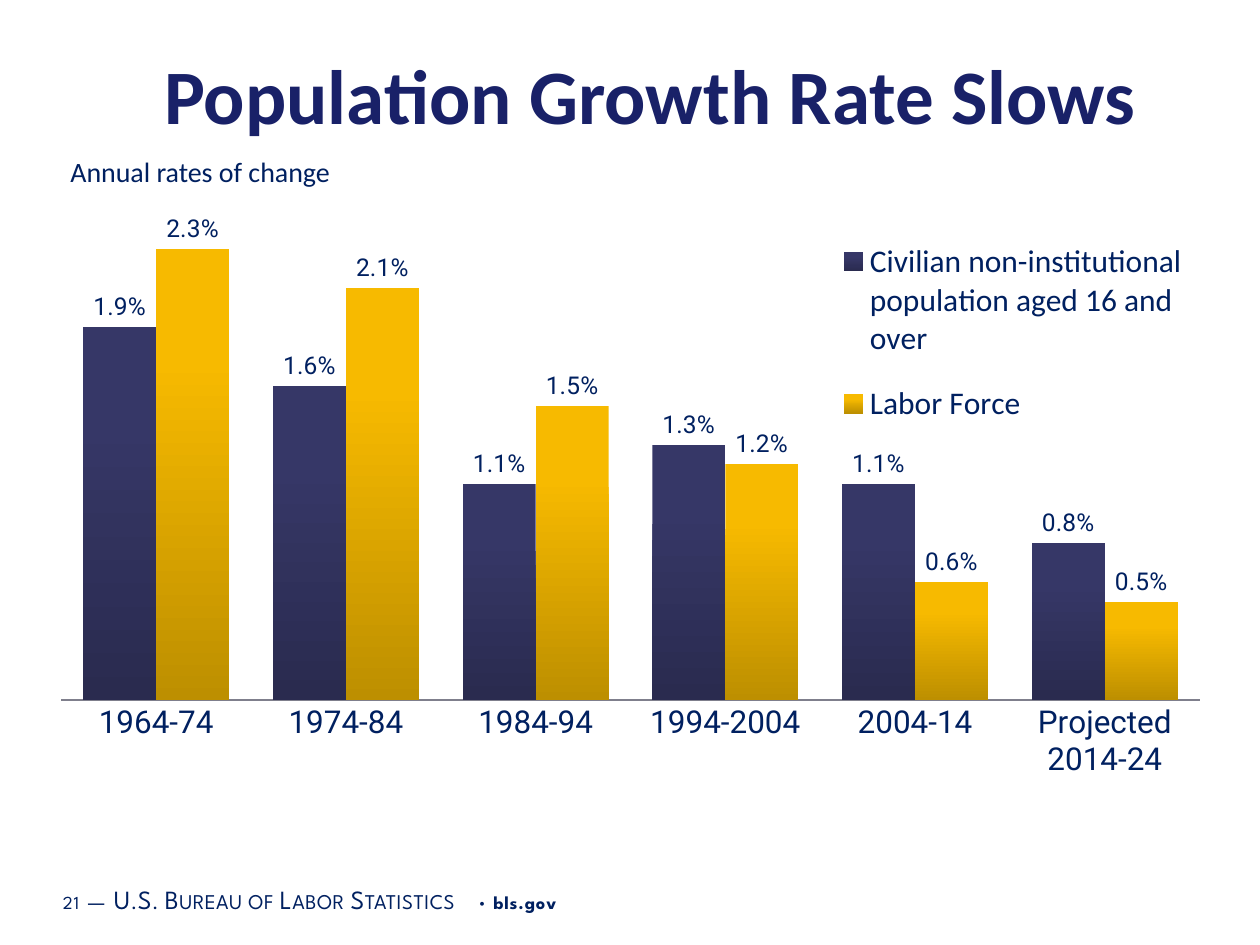
from dataclasses import dataclass, field
from typing import Any, NamedTuple

from lxml.etree import SubElement
from pptx import Presentation
from pptx.chart.data import CategoryChartData
from pptx.dml.color import RGBColor as Rgb
from pptx.enum.chart import XL_CHART_TYPE as ChartType
from pptx.enum.chart import XL_LABEL_POSITION as LabelPos
from pptx.enum.chart import XL_LEGEND_POSITION as LegendPos
from pptx.enum.chart import XL_TICK_MARK as TickMark
from pptx.enum.text import MSO_ANCHOR as Anchor
from pptx.enum.text import PP_ALIGN as Align
from pptx.oxml.ns import qn
from pptx.util import Cm, Pt


@dataclass(frozen=True)
class Theme:
    navy: Rgb = Rgb.from_string("002060")
    title_blue: Rgb = Rgb.from_string("192168")
    axis_gray: Rgb = Rgb.from_string("7F7F8C")
    body_font: str = "Calibri"
    chart_font: str = "Roboto"
    footer_font: str = "League Spartan"
    title_size: Pt = Pt(44)
    chart_size: Pt = Pt(18)
    note_size: Pt = Pt(16)
    agency_size: Pt = Pt(15)
    label_size: Pt = Pt(14)
    footer_size: Pt = Pt(10.5)


THEME = Theme()


class Box(NamedTuple):
    """Left, top, width and height in centimetres."""
    left: float
    top: float
    width: float
    height: float

    def lengths(self) -> list[Cm]:
        return [Cm(value) for value in self]


class Area(NamedTuple):
    """Place within the chart, as fractions of its size."""
    x: float
    y: float
    w: float
    h: float


class RateSeries(NamedTuple):
    name: str
    rates: list[float]
    top_color: str
    base_color: str


@dataclass
class Span:
    text: str
    font: dict[str, Any]
    xml: dict[str, str] = field(default_factory=dict)


def apply_format(target: Any, values: dict[str, Any]) -> None:
    for name, value in values.items():
        setattr(target, name, value)


def apply_font(font: Any, values: dict[str, Any], color: Rgb) -> None:
    apply_format(font, values)
    font.color.rgb = color


def add_text(slide: Any, box: Box, spans: list[Span], color: Rgb,
             frame_format: dict[str, Any],
             paragraph_format: dict[str, Any]) -> None:
    frame = slide.shapes.add_textbox(*box.lengths()).text_frame
    apply_format(frame, {"word_wrap": True, **frame_format})
    paragraph = frame.paragraphs[0]
    apply_format(paragraph, paragraph_format)
    for span in spans:
        run = paragraph.add_run()
        run.text = span.text
        apply_font(run.font, span.font, color)
        for name, value in span.xml.items():
            run.font._element.set(name, value)


def make_layout(parent: Any, area: Area, inner: bool = False) -> Any:
    """Replace the manual layout of a plot area or legend."""
    for old in parent.findall(qn("c:layout")):
        parent.remove(old)
    layout = SubElement(parent, qn("c:layout"))
    manual = SubElement(layout, qn("c:manualLayout"))
    settings = {"layoutTarget": "inner"} if inner else {}
    settings |= {"xMode": "edge", "yMode": "edge"}
    settings |= {name: str(value) for name, value in area._asdict().items()}
    for name, value in settings.items():
        SubElement(manual, qn(f"c:{name}")).set("val", value)
    return layout


def style_series(bars: Any, series: RateSeries) -> None:
    fill = bars.format.fill
    fill.gradient()
    fill.gradient_angle = 270
    stops = zip(fill.gradient_stops, (0.25, 1),
                (series.top_color, series.base_color))
    for stop, position, color in stops:
        stop.position = position
        stop.color.rgb = Rgb.from_string(color)
    labels = bars.data_labels
    apply_format(labels, {
        "show_value": True, "number_format": "0.0%",
        "number_format_is_linked": False, "position": LabelPos.OUTSIDE_END})
    apply_font(labels.font, {"name": THEME.chart_font,
                             "size": THEME.label_size}, THEME.navy)


def add_rate_chart(slide: Any, box: Box, periods: list[str],
                   all_series: list[RateSeries]) -> None:
    data = CategoryChartData(number_format="0.0%")
    data.categories = periods
    for series in all_series:
        data.add_series(series.name, series.rates)
    chart = slide.shapes.add_chart(
        ChartType.COLUMN_CLUSTERED, *box.lengths(), data).chart
    apply_format(chart, {"has_title": False, "has_legend": True})
    apply_font(chart.font, {"name": THEME.chart_font,
                            "size": THEME.chart_size}, THEME.navy)

    # Columns
    plot = chart.plots[0]
    apply_format(plot, {"gap_width": 60, "overlap": 0,
                        "vary_by_categories": False})
    for bars, series in zip(plot.series, all_series):
        style_series(bars, series)

    # Axes
    apply_format(chart.value_axis, {
        "minimum_scale": 0, "maximum_scale": 0.025, "visible": False,
        "has_major_gridlines": False})
    apply_format(chart.category_axis, {
        "major_tick_mark": TickMark.NONE, "minor_tick_mark": TickMark.NONE})
    axis_line = chart.category_axis.format.line
    axis_line.color.rgb = THEME.axis_gray
    axis_line.width = Pt(1)

    # Legend and plot positions
    legend = chart.legend
    apply_format(legend, {"position": LegendPos.RIGHT,
                          "include_in_layout": False})
    apply_font(legend.font, {"name": THEME.body_font,
                             "size": THEME.chart_size}, THEME.navy)
    legend_xml = legend._element
    legend_layout = make_layout(legend_xml, Area(0.675, 0.05, 0.32, 0.38))
    legend_xml.find(qn("c:legendPos")).addnext(legend_layout)
    plot_area = plot._element.getparent()
    plot_area.insert(0, make_layout(
        plot_area, Area(0, 0.041, 0.999, 0.791), inner=True))


PERIODS = ["1964-74", "1974-84", "1984-94", "1994-2004", "2004-14",
           "Projected 2014-24"]
GROWTH = [
    RateSeries("Civilian non-institutional population aged 16 and over",
               [0.019, 0.016, 0.011, 0.013, 0.011, 0.008],
               "363767", "2A2B4F"),
    RateSeries("Labor Force", [0.023, 0.021, 0.015, 0.012, 0.006, 0.005],
               "F7BA00", "BD8F00"),
]


def main() -> None:
    deck = Presentation()
    apply_format(deck, {"slide_width": Cm(25.4), "slide_height": Cm(19.05)})
    slide = deck.slides.add_slide(deck.slide_layouts[6])

    # Footer
    plain = {"name": THEME.footer_font, "size": THEME.footer_size}
    gap = plain | {"size": THEME.note_size}
    agency = plain | {"size": THEME.agency_size}
    wide = {"spc": "50"}
    small_caps = {"spc": "30", "cap": "small"}
    footer = [
        Span("21", plain, wide),
        Span(" ", gap, wide),
        Span("—", agency, small_caps),
        Span(" ", gap, wide),
        Span("U.S. Bureau of Labor Statistics", agency, small_caps),
        Span(" • ", plain, wide),
        Span("bls.gov", plain | {"bold": True}, wide),
    ]
    add_text(slide, Box(1.09, 17.6, 16.08, 1.02), footer, THEME.navy,
             {"vertical_anchor": Anchor.MIDDLE,
              "margin_left": Cm(0.18), "margin_right": Cm(0.18),
              "margin_top": Cm(0.1), "margin_bottom": Cm(0.1)}, {})

    # Title
    title_font = {"name": THEME.body_font, "size": THEME.title_size,
                  "bold": True}
    add_text(slide, Box(2.13, 0, 21.97, 4.24),
             [Span("Population Growth Rate Slows", title_font)],
             THEME.title_blue, {"vertical_anchor": Anchor.MIDDLE},
             {"alignment": Align.CENTER, "line_spacing": Pt(40)})

    # Chart and its unit note
    add_rate_chart(slide, Box(1.22, 3.71, 22.99, 12.5), PERIODS, GROWTH)
    note_font = {"name": THEME.body_font, "size": THEME.note_size}
    add_text(slide, Box(1.17, 3, 7.29, 0.94),
             [Span("Annual rates of change", note_font)], THEME.navy, {}, {})

    deck.save("out.pptx")


if __name__ == "__main__":
    main()
